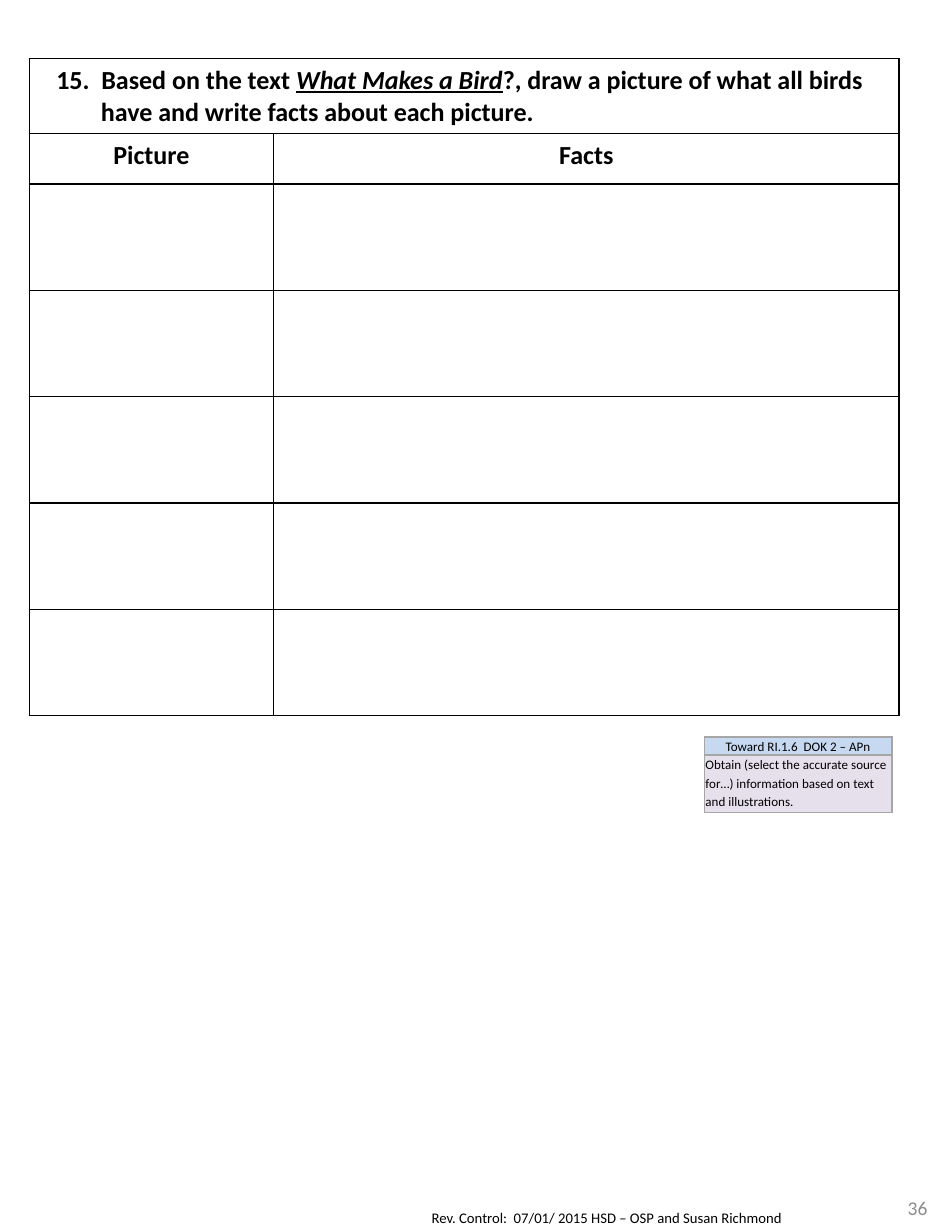
import pptx
import pptx.dml.color
import pptx.enum.text
import pptx.oxml
import pptx.oxml.ns
import pptx.util
from pptx.util import Inches

ALIGN = pptx.enum.text.PP_ALIGN
ANCHOR = pptx.enum.text.MSO_ANCHOR


def color(value):
    return pptx.dml.color.RGBColor.from_string(value)


class Worksheet:
    """Holds the text style and the slide that elements are added to."""

    font_name = "Calibri"
    ink = "000000"

    def __init__(self, slide):
        self.slide = slide

    def style_runs(self, paragraph, size, ink=None, bold=False):
        for run in paragraph.runs:
            run.font.name = self.font_name
            run.font.size = pptx.util.Pt(size)
            run.font.bold = bold
            run.font.color.rgb = color(ink or self.ink)

    def text(self, box, content, size, ink=None, align=ALIGN.LEFT, anchor=ANCHOR.TOP):
        shape = self.slide.shapes.add_textbox(*map(Inches, box))
        text_frame = shape.text_frame
        text_frame.word_wrap = True
        text_frame.vertical_anchor = anchor
        text_frame.text = content
        paragraph = text_frame.paragraphs[0]
        paragraph.alignment = align
        self.style_runs(paragraph, size, ink)

    def table(self, left, top, widths, heights, border, margins):
        shape = self.slide.shapes.add_table(
            len(heights), len(widths), Inches(left), Inches(top),
            Inches(sum(widths)), Inches(sum(heights)))
        table = shape.table
        table.first_row = table.horz_banding = False
        for column, width in zip(table.columns, widths):
            column.width = Inches(width)
        for row, height in zip(table.rows, heights):
            row.height = Inches(height)
        for cell in table.iter_cells():
            cell.margin_left = cell.margin_right = Inches(margins[0])
            cell.margin_top = cell.margin_bottom = Inches(margins[1])
            self.borders(cell, border)
            cell.fill.background()
        return table

    def borders(self, cell, border):
        properties = cell._tc.get_or_add_tcPr()
        for side in ("lnL", "lnR", "lnT", "lnB"):
            properties.append(pptx.oxml.parse_xml(
                f'<a:{side} {pptx.oxml.ns.nsdecls("a")} w="12700"><a:solidFill>'
                f'<a:srgbClr val="{border}"/></a:solidFill></a:{side}>'))

    def cell(self, cell, content, size, align=ALIGN.LEFT, bold=False, fill=None, spacing=None):
        cell.text_frame.text = content
        paragraph = cell.text_frame.paragraphs[0]
        paragraph.alignment = align
        paragraph.line_spacing = spacing
        self.style_runs(paragraph, size, bold=bold)
        if fill:
            cell.fill.solid()
            cell.fill.fore_color.rgb = color(fill)

    def question(self, cell, before, title, after, size):
        paragraph = cell.text_frame.paragraphs[0]
        for part in (before, title, after):
            paragraph.add_run().text = part
        self.style_runs(paragraph, size, bold=True)
        title_font = paragraph.runs[1].font
        title_font.italic = title_font.underline = True
        properties = paragraph._p.get_or_add_pPr()
        properties.set("marL", str(Inches(0.51)))
        properties.set("indent", str(Inches(-0.38)))


def main():
    presentation = pptx.Presentation()
    presentation.slide_width = Inches(8)
    presentation.slide_height = Inches(10.5)
    sheet = Worksheet(presentation.slides.add_slide(presentation.slide_layouts[6]))

    sheet.text((3.58, 10.25, 4, 0.25),
               "Rev. Control:  07/01/ 2015 HSD – OSP and Susan Richmond", 9)
    sheet.text((7.13, 10.08, 0.87, 0.42), "36", 12, "8C8C8C", ALIGN.RIGHT, ANCHOR.MIDDLE)

    answers = sheet.table(0.25, 0.5, [2.08, 5.33], [0.64, 0.43] + [0.906] * 5,
                          "000000", (0.1, 0.05))
    answers.cell(0, 0).merge(answers.cell(0, 1))
    sheet.question(answers.cell(0, 0), "15.  Based on the text ", "What Makes a Bird",
                   "?, draw a picture of what all birds have and write facts about each picture.", 16)
    for column, heading in enumerate(("Picture", "Facts")):
        sheet.cell(answers.cell(1, column), heading, 16, ALIGN.CENTER, bold=True)

    standard = sheet.table(6, 6.28, [1.6], [0.15, 0.49], "A6A6A6", (0.01, 0))
    standard.cell(0, 0).vertical_anchor = ANCHOR.MIDDLE
    sheet.cell(standard.cell(0, 0), "Toward RI.1.6  DOK 2 – APn", 8, ALIGN.CENTER,
               fill="C6D9F1", spacing=1.15)
    sheet.cell(standard.cell(1, 0),
               "Obtain (select the accurate source for…) information based on text and illustrations.",
               8, fill="E6E0EC", spacing=1.15)

    presentation.save("out.pptx")


if __name__ == "__main__":
    main()
